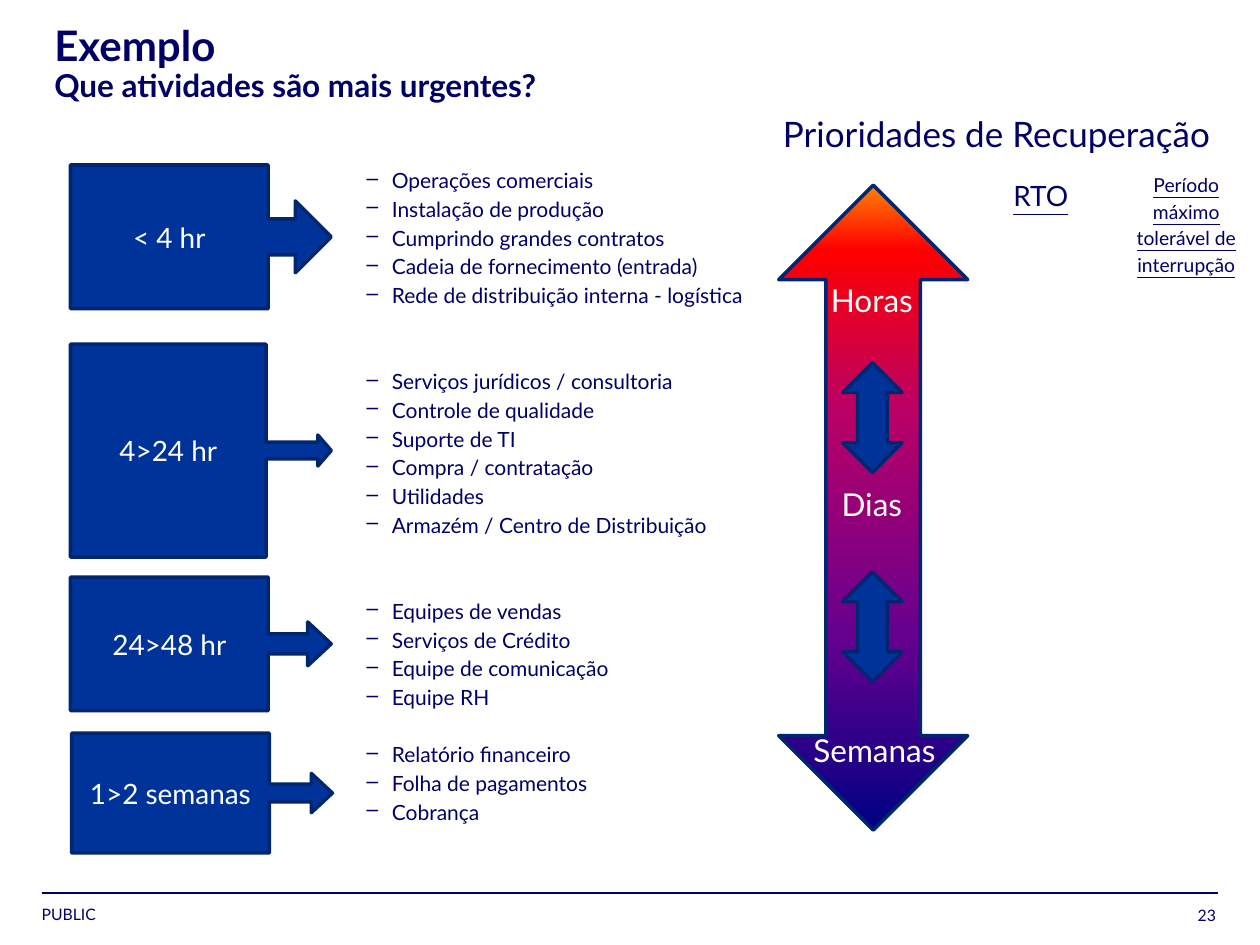
"""Build the recovery priorities slide."""
import pptx
import pptx.dml.color
import pptx.enum.shapes
import pptx.enum.text
import pptx.oxml.ns
import pptx.util
from lxml import etree

Pt = pptx.util.Pt
RGBColor = pptx.dml.color.RGBColor
SHAPE = pptx.enum.shapes.MSO_SHAPE
ALIGN = pptx.enum.text.PP_ALIGN
ANCHOR = pptx.enum.text.MSO_ANCHOR
qn = pptx.oxml.ns.qn

NAVY = RGBColor(0x00, 0x00, 0x66)
BLUE = RGBColor(0x00, 0x33, 0x99)
OUTLINE = RGBColor(0x00, 0x26, 0x71)
WHITE = RGBColor(0xFF, 0xFF, 0xFF)
GRADIENT = [
    (0, RGBColor(0x00, 0x00, 0x82)),
    (30, RGBColor(0x66, 0x00, 0x8F)),
    (65, RGBColor(0xBA, 0x00, 0x66)),
    (90, RGBColor(0xFF, 0x00, 0x00)),
    (100, RGBColor(0xFF, 0x82, 0x00)),
]

FONT = "Lato"
LINE_PITCH = 16.4
NO_INSET = (0, 0)
BOX_INSET = (7.2, 3.6)

TITLE_LINES = [("Exemplo", 24), ("Que atividades são mais urgentes?", 18)]

ACTIVITIES = [
    (0, ["Operações comerciais", "Instalação de produção",
         "Cumprindo grandes contratos", "Cadeia de fornecimento (entrada)",
         "Rede de distribuição interna - logística"]),
    (2, ["Serviços jurídicos / consultoria", "Controle de qualidade",
         "Suporte de TI", "Compra / contratação", "Utilidades",
         "Armazém / Centro de Distribuição"]),
    (2, ["Equipes de vendas", "Serviços de Crédito",
         "Equipe de comunicação", "Equipe RH"]),
    (1, ["Relatório financeiro", "Folha de pagamentos", "Cobrança"]),
]

CALLOUTS = [
    ("< 4 hr", (40.3, 94.3, 149, 82.1), (0.25, 0.25, 0.25, 0.758)),
    ("4>24 hr", (40.3, 196.6, 149, 121.7), (0.079, 0.073, 0.063, 0.75)),
    ("24>48 hr", (40.3, 329.8, 149, 76.3), (0.148, 0.164, 0.176, 0.758)),
    ("1>2 semanas", (41, 419, 149, 68.4), (0.148, 0.164, 0.176, 0.758)),
]

PRIORITY_ARROW = (445, 105.8, 108, 368.6)
STEP_ARROWS = [(481.7, top, 33.8, 62.6) for top in (207.4, 326.9)]

CENTERED = {"alignment": ALIGN.CENTER}
SPACED = {"alignment": ALIGN.CENTER, "line_spacing": 1.15}
LABELS = [
    ("Prioridades de Recuperação", (433.4, 60.5, 272.2, 31.7), CENTERED,
     {"size": Pt(20)}, NAVY),
    ("Horas", (457.9, 157, 80.6, 28.8), CENTERED, {"size": Pt(18)}, WHITE),
    ("Dias", (457.9, 273.6, 80.6, 28.8), CENTERED, {"size": Pt(18)}, WHITE),
    ("Semanas", (452.2, 414, 95, 28.8), CENTERED, {"size": Pt(18)}, WHITE),
    ("RTO", (553, 95.8, 83.5, 29.5), SPACED,
     {"size": Pt(16), "underline": True}, NAVY),
    ("Período máximo tolerável de interrupção", (635.8, 93.6, 84.2, 68.4),
     SPACED, {"size": Pt(11), "underline": True}, NAVY),
]


def apply(target, values):
    for name, value in values.items():
        setattr(target, name, value)


def format_font(font, values, color):
    apply(font, {"name": FONT, **values})
    font.color.rgb = color


def format_frame(frame, inset, anchor=ANCHOR.TOP, wrap=True):
    side, edge = map(Pt, inset)
    apply(frame, {
        "margin_left": side, "margin_right": side,
        "margin_top": edge, "margin_bottom": edge,
        "vertical_anchor": anchor, "word_wrap": wrap,
    })


def write(paragraph, text, layout, font_values, color):
    apply(paragraph, layout)
    run = paragraph.add_run()
    run.text = text
    format_font(run.font, font_values, color)


def add_box(slide, place, inset=BOX_INSET, **frame_values):
    frame = slide.shapes.add_textbox(*map(Pt, place)).text_frame
    format_frame(frame, inset, **frame_values)
    return frame


def add_shape(slide, kind, place):
    shape = slide.shapes.add_shape(kind, *map(Pt, place))
    shape.shadow.inherit = False
    shape.fill.solid()
    shape.fill.fore_color.rgb = BLUE
    shape.line.color.rgb = OUTLINE
    shape.line.width = Pt(2)
    etree.SubElement(shape.line._get_or_add_ln(), qn("a:round"))
    return shape


def fill_gradient(shape, stops):
    shape.fill.gradient()
    shape.fill.gradient_angle = 90
    stop_list = shape._element.spPr.find(".//" + qn("a:gsLst"))
    for stop in list(stop_list):
        stop_list.remove(stop)
    for percent, color in stops:
        stop = etree.SubElement(stop_list, qn("a:gs"), pos=str(percent * 1000))
        etree.SubElement(stop, qn("a:srgbClr"), val=str(color))


def add_bullet(paragraph):
    properties = paragraph._p.get_or_add_pPr()
    properties.set("marL", str(Pt(22.3)))
    properties.set("indent", str(Pt(-14.4)))
    bullet_color = etree.SubElement(properties, qn("a:buClr"))
    etree.SubElement(bullet_color, qn("a:srgbClr"), val=str(NAVY))
    etree.SubElement(properties, qn("a:buChar"), char="–")


def add_title(slide):
    paragraph = add_box(slide, (31, 14.4, 538.6, 80.6), NO_INSET).paragraphs[0]
    for index, (text, size) in enumerate(TITLE_LINES):
        if index:
            paragraph.add_line_break()
        write(paragraph, text, {"line_spacing": 0.9},
              {"size": Pt(size), "bold": True}, NAVY)


def add_activities(slide):
    frame = add_box(slide, (201.6, 95.8, 260.6, 401), NO_INSET)
    paragraph = frame.paragraphs[0]
    for gap_lines, activities in ACTIVITIES:
        for index, activity in enumerate(activities):
            if paragraph.runs:
                paragraph = frame.add_paragraph()
            add_bullet(paragraph)
            layout = {"space_after": Pt(2)}
            if gap_lines and index == 0:
                layout["space_before"] = Pt(gap_lines * LINE_PITCH)
            write(paragraph, activity, layout, {"size": Pt(12)}, NAVY)


def add_footer(slide):
    rule = slide.shapes.add_connector(
        pptx.enum.shapes.MSO_CONNECTOR.STRAIGHT,
        *map(Pt, (23.8, 510.5, 696.2, 510.5)))
    rule.line.color.rgb = NAVY
    rule.line.width = Pt(1)
    etree.SubElement(rule._element.spPr, qn("a:effectLst"))
    label = add_box(slide, (23.8, 517, 92.2, 10.8), NO_INSET, wrap=False)
    number = add_box(slide, (657.4, 517, 37.4, 11.5), NO_INSET,
                     anchor=ANCHOR.BOTTOM)
    for frame, text, alignment in [(label, "PUBLIC", ALIGN.LEFT),
                                   (number, "23", ALIGN.RIGHT)]:
        write(frame.paragraphs[0], text, {"alignment": alignment},
              {"size": Pt(9)}, NAVY)


def main():
    presentation = pptx.Presentation()
    apply(presentation, {"slide_width": Pt(720), "slide_height": Pt(540)})
    slide = presentation.slides.add_slide(presentation.slide_layouts[6])
    add_footer(slide)
    add_title(slide)
    add_activities(slide)
    fill_gradient(add_shape(slide, SHAPE.UP_DOWN_ARROW, PRIORITY_ARROW),
                  GRADIENT)
    for place in STEP_ARROWS:
        add_shape(slide, SHAPE.UP_DOWN_ARROW, place)
    for text, place, layout, font_values, color in LABELS:
        frame = add_box(slide, place)
        write(frame.paragraphs[0], text, layout, font_values, color)
    for text, place, adjustments in CALLOUTS:
        callout = add_shape(slide, SHAPE.RIGHT_ARROW_CALLOUT, place)
        for index, value in enumerate(adjustments):
            callout.adjustments[index] = value
        format_frame(callout.text_frame, BOX_INSET, anchor=ANCHOR.MIDDLE)
        write(callout.text_frame.paragraphs[0], text, CENTERED,
              {"size": Pt(16)}, WHITE)
    presentation.save("out.pptx")


if __name__ == "__main__":
    main()
